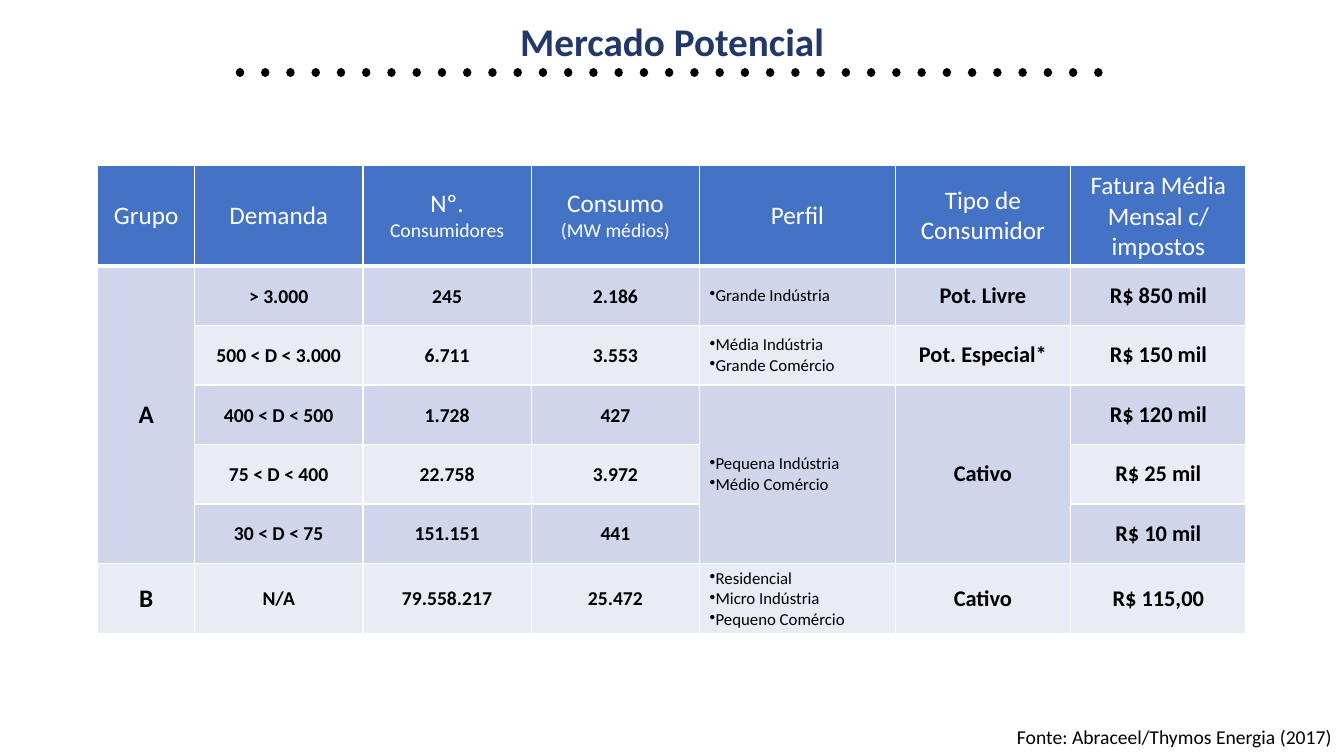
from dataclasses import dataclass

from lxml import etree
from pptx import Presentation
from pptx.dml.color import RGBColor
from pptx.enum.shapes import MSO_CONNECTOR
from pptx.enum.text import MSO_ANCHOR, MSO_AUTO_SIZE, PP_ALIGN
from pptx.oxml.ns import qn
from pptx.util import Inches, Pt

STRAIGHT = MSO_CONNECTOR.STRAIGHT
MIDDLE = MSO_ANCHOR.MIDDLE
GROW = MSO_AUTO_SIZE.SHAPE_TO_FIT_TEXT
LEFT, CENTER, RIGHT = PP_ALIGN.LEFT, PP_ALIGN.CENTER, PP_ALIGN.RIGHT
TITLE_ONLY = 5


@dataclass(frozen=True)
class Theme:
    """Colours, font and type sizes of the slide."""
    font: str = "Calibri"
    title: str = "213868"
    ink: str = "000000"
    white: str = "FFFFFF"
    header: str = "4472C4"
    bands: tuple = ("CFD5EA", "E9EBF5")
    title_size: int = 28
    large: int = 18
    medium: int = 16
    small: int = 14
    bullet: int = 12


THEME = Theme()
COLUMN_WIDTHS = (0.96, 1.67, 1.67, 1.67, 1.94, 1.74, 1.74)
ROW_HEIGHTS = (1.0, 0.59, 0.59, 0.59, 0.59, 0.59, 0.7)
BODY_SIZES = (THEME.large,) + (THEME.small,) * 3 + (THEME.bullet,) + (THEME.medium,) * 2
NUMBER_COLUMNS = (1, 2, 3)
PROFILE_COLUMN = 4
MERGES = ((1, 0, 5, 0), (3, 4, 5, 4), (3, 5, 5, 5))
LARGE, SMALL = THEME.large, THEME.small
HEADERS = (
    [[("Grupo", LARGE)]],
    [[("Demanda", LARGE)]],
    [[("Nº. ", LARGE), ("Consumidores", SMALL)]],
    [[("Consumo", LARGE)], [("(MW médios)", SMALL)]],
    [[("Perfil", LARGE)]],
    [[("Tipo de Consumidor", LARGE)]],
    [[("Fatura Média Mensal c/ impostos", LARGE)]],
)
ROWS = (
    ("A", "> 3.000", "245", "2.186", "Grande Indústria", "Pot. Livre", "R$ 850 mil"),
    (None, "500 < D < 3.000", "6.711", "3.553", "Média Indústria\nGrande Comércio",
     "Pot. Especial*", "R$ 150 mil"),
    (None, "400 < D < 500", "1.728", "427", "Pequena Indústria\nMédio Comércio",
     "Cativo", "R$ 120 mil"),
    (None, "75 < D < 400", "22.758", "3.972", None, None, "R$ 25 mil"),
    (None, "30 < D < 75", "151.151", "441", None, None, "R$ 10 mil"),
    ("B", "N/A", "79.558.217", "25.472",
     "Residencial\nMicro Indústria\nPequeno Comércio", "Cativo", "R$ 115,00"),
)


def apply_format(target, values):
    """Set each named attribute on the target."""
    for name, value in values.items():
        setattr(target, name, value)


def place(left, top, width, height):
    """Return position and size values in inches."""
    lengths = (left, top, width, height)
    return dict(zip(("left", "top", "width", "height"), map(Inches, lengths)))


def margins(side, bottom):
    """Return inset values with an own bottom inset."""
    values = {f"margin_{edge}": Inches(side) for edge in ("left", "top", "right")}
    return {**values, "margin_bottom": Inches(bottom)}


def write_text(frame, paragraphs, color, bold=False, align=CENTER, bullet=False, spacing=None):
    """Write paragraphs given as lists of text and size pairs."""
    for index, spans in enumerate(paragraphs):
        para = frame.add_paragraph() if index else frame.paragraphs[0]
        apply_format(para, {"alignment": align, "line_spacing": spacing})
        if bullet:
            properties = para._p.get_or_add_pPr()
            properties.set("marL", "0")
            properties.set("indent", "0")
            etree.SubElement(properties, qn("a:buChar"), char="•")
        for text, size in spans:
            span = para.add_run()
            span.text = text
            apply_format(span.font, {"name": THEME.font, "size": Pt(size), "bold": bold})
            span.font.color.rgb = RGBColor.from_string(color)


def add_title(page):
    """Fill and move the title placeholder."""
    box = page.shapes.title
    apply_format(box, place(0, 0.07, 13.33, 0.58))
    apply_format(box.text_frame, {**margins(0.03, 0.03), "word_wrap": True,
                                  "vertical_anchor": MIDDLE, "auto_size": GROW})
    write_text(box.text_frame, [[("Mercado Potencial", THEME.title_size)]],
               THEME.title, bold=True, spacing=1.2)


def add_dotted_rule(page):
    """Draw the row of round dots below the title."""
    rule = page.shapes.add_connector(STRAIGHT, Inches(2.38), Inches(0.72),
                                     Inches(10.95), Inches(0.72))
    rule.line.width = Pt(6)
    rule.line.color.rgb = RGBColor.from_string(THEME.ink)
    outline = rule.line._ln
    outline.set("cap", "rnd")
    dashes = etree.SubElement(outline, qn("a:custDash"))
    etree.SubElement(dashes, qn("a:ds"), d="100000", sp="200000")
    etree.SubElement(rule._element.spPr, qn("a:effectLst"))


def style_cell(cell, fill, bottom=1):
    """Give a cell white borders, a fill and middle anchoring."""
    properties = cell._tc.get_or_add_tcPr()
    for edge, width in (("L", 1), ("R", 1), ("T", 1), ("B", bottom)):
        border = etree.SubElement(properties, qn(f"a:ln{edge}"), w=str(Pt(width)))
        solid = etree.SubElement(border, qn("a:solidFill"))
        etree.SubElement(solid, qn("a:srgbClr"), val=THEME.white)
    cell.fill.solid()
    cell.fill.fore_color.rgb = RGBColor.from_string(fill)
    cell.vertical_anchor = MIDDLE


def fill_body_cell(cell, text, column):
    """Write one body cell in the format of its column."""
    if column in NUMBER_COLUMNS:
        apply_format(cell, margins(0.01, 0))
    is_profile = column == PROFILE_COLUMN
    paragraphs = [[(line, BODY_SIZES[column])] for line in text.split("\n")]
    write_text(cell.text_frame, paragraphs, THEME.ink, bold=not is_profile,
               align=LEFT if is_profile else CENTER, bullet=is_profile)


def add_market_table(page):
    """Build the table of consumer groups."""
    frame = page.shapes.add_table(len(ROW_HEIGHTS), len(COLUMN_WIDTHS),
                                  **place(0.97, 1.64, 11.38, 4.65))
    table = frame.table
    for column, width in zip(table.columns, COLUMN_WIDTHS):
        column.width = Inches(width)
    for row, height in zip(table.rows, ROW_HEIGHTS):
        row.height = Inches(height)
    for column, paragraphs in enumerate(HEADERS):
        cell = table.cell(0, column)
        style_cell(cell, THEME.header, bottom=3)
        write_text(cell.text_frame, paragraphs, THEME.white)
    for index, row in enumerate(ROWS):
        for column, text in enumerate(row):
            cell = table.cell(index + 1, column)
            style_cell(cell, THEME.bands[index % 2])
            if text:
                fill_body_cell(cell, text, column)
    for top, left, bottom, right in MERGES:
        table.cell(top, left).merge(table.cell(bottom, right))


def add_source_note(page):
    """Add the source line at the bottom right."""
    box = page.shapes.add_textbox(**place(9.95, 7.14, 3.36, 0.34))
    apply_format(box.text_frame, {"word_wrap": True, "auto_size": GROW})
    write_text(box.text_frame, [[("Fonte: Abraceel/Thymos Energia (2017)", THEME.small)]],
               THEME.ink, align=RIGHT)


def main():
    """Build and save the slide."""
    deck = Presentation()
    apply_format(deck, {"slide_width": Inches(13.33), "slide_height": Inches(7.5)})
    page = deck.slides.add_slide(deck.slide_layouts[TITLE_ONLY])
    add_dotted_rule(page)
    add_title(page)
    add_market_table(page)
    add_source_note(page)
    deck.save("out.pptx")


if __name__ == "__main__":
    main()
